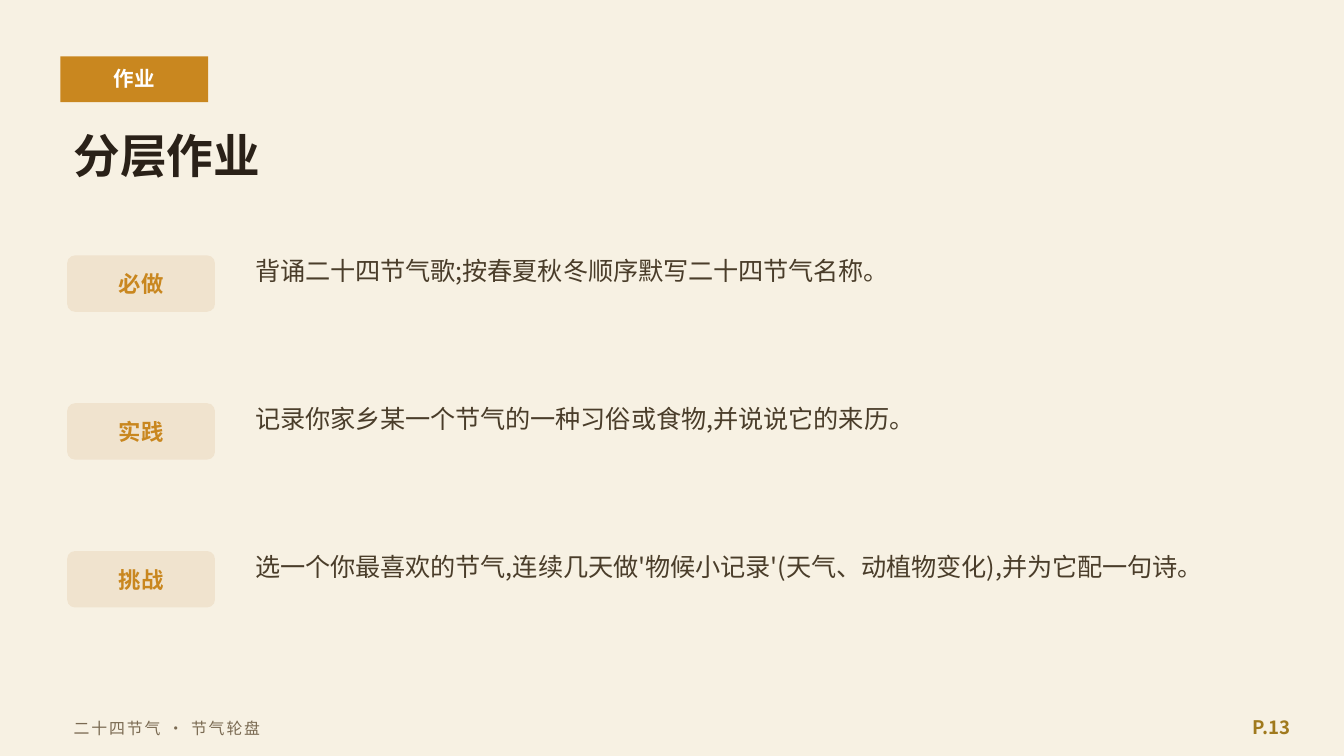
from lxml.etree import SubElement
from pptx import Presentation
from pptx.dml.color import RGBColor
from pptx.enum.shapes import MSO_SHAPE as Shape
from pptx.enum.text import MSO_ANCHOR as Anchor, PP_ALIGN as Align
from pptx.oxml.ns import qn
from pptx.util import Emu, Pt

PX = 4572  # 200 px to the inch

THEME = {
    "font": "Noto Sans CJK SC",
    "paper": "F7F1E3",
    "amber": "C9871F",
    "sand": "F0E3CE",
    # text styles: size, colour, bold
    "tag": (11, "FFFFFF", True),
    "title": (25, "2A2118", True),
    "level": (12, "C9871F", True),
    "task": (13.5, "4A3D2A", False),
    "footer": (8.5, "7A6A52", False),
    "page": (10, "A07A1E", True),
}

prs = Presentation()
prs.slide_width, prs.slide_height = Emu(2000 * PX), Emu(1125 * PX)
slide = prs.slides.add_slide(prs.slide_layouts[6])
slide.background.fill.solid()
slide.background.fill.fore_color.rgb = RGBColor.from_string(THEME["paper"])


def add_block(kind, box, color):
    block = slide.shapes.add_shape(kind, *(Emu(n * PX) for n in box))
    block.shadow.inherit = False
    block.fill.solid()
    block.fill.fore_color.rgb = RGBColor.from_string(THEME[color])
    block.line.fill.background()
    return block


def add_text(text, box, style, align=Align.LEFT, anchor=Anchor.MIDDLE, spacing=0):
    frame = slide.shapes.add_textbox(*(Emu(n * PX) for n in box)).text_frame
    frame.word_wrap = True
    frame.vertical_anchor = anchor
    paragraph = frame.paragraphs[0]
    paragraph.text = text
    paragraph.alignment = align
    size, color, bold = THEME[style]
    font = paragraph.font
    font.size, font.bold, font.name = Pt(size), bold, THEME["font"]
    font.color.rgb = RGBColor.from_string(color)
    # East Asian typeface and letter spacing
    defaults = paragraph._p.pPr.find(qn("a:defRPr"))
    SubElement(defaults, qn("a:ea"), typeface=THEME["font"])
    if spacing:
        defaults.set("spc", str(spacing * 100))


# Section tag and title
add_block(Shape.RECTANGLE, (90, 84, 220, 68), "amber")
add_text("作业", (90, 80, 220, 72), "tag", Align.CENTER)
add_text("分层作业", (90, 170, 1800, 120), "title")

# Homework levels, one row each
homework = [
    ("必做", "背诵二十四节气歌;按春夏秋冬顺序默写二十四节气名称。"),
    ("实践", "记录你家乡某一个节气的一种习俗或食物,并说说它的来历。"),
    ("挑战", "选一个你最喜欢的节气,连续几天做'物候小记录'(天气、动植物变化),并为它配一句诗。"),
]
ROW_TOP, ROW_STEP = 380, 220
for row, (level, task) in enumerate(homework):
    top = ROW_TOP + row * ROW_STEP
    pill = add_block(Shape.ROUNDED_RECTANGLE, (100, top, 220, 84), "sand")
    pill.adjustments[0] = 0.14
    add_text(level, (100, top - 2, 220, 88), "level", Align.CENTER)
    add_text(task, (360, top - 10, 1540, 180), "task", anchor=Anchor.TOP)

# Footer
add_text("二十四节气 · 节气轮盘", (90, 1056, 1400, 56), "footer", spacing=1)
add_text("P.13", (1800, 1052, 140, 60), "page", Align.RIGHT)

prs.save("out.pptx")
